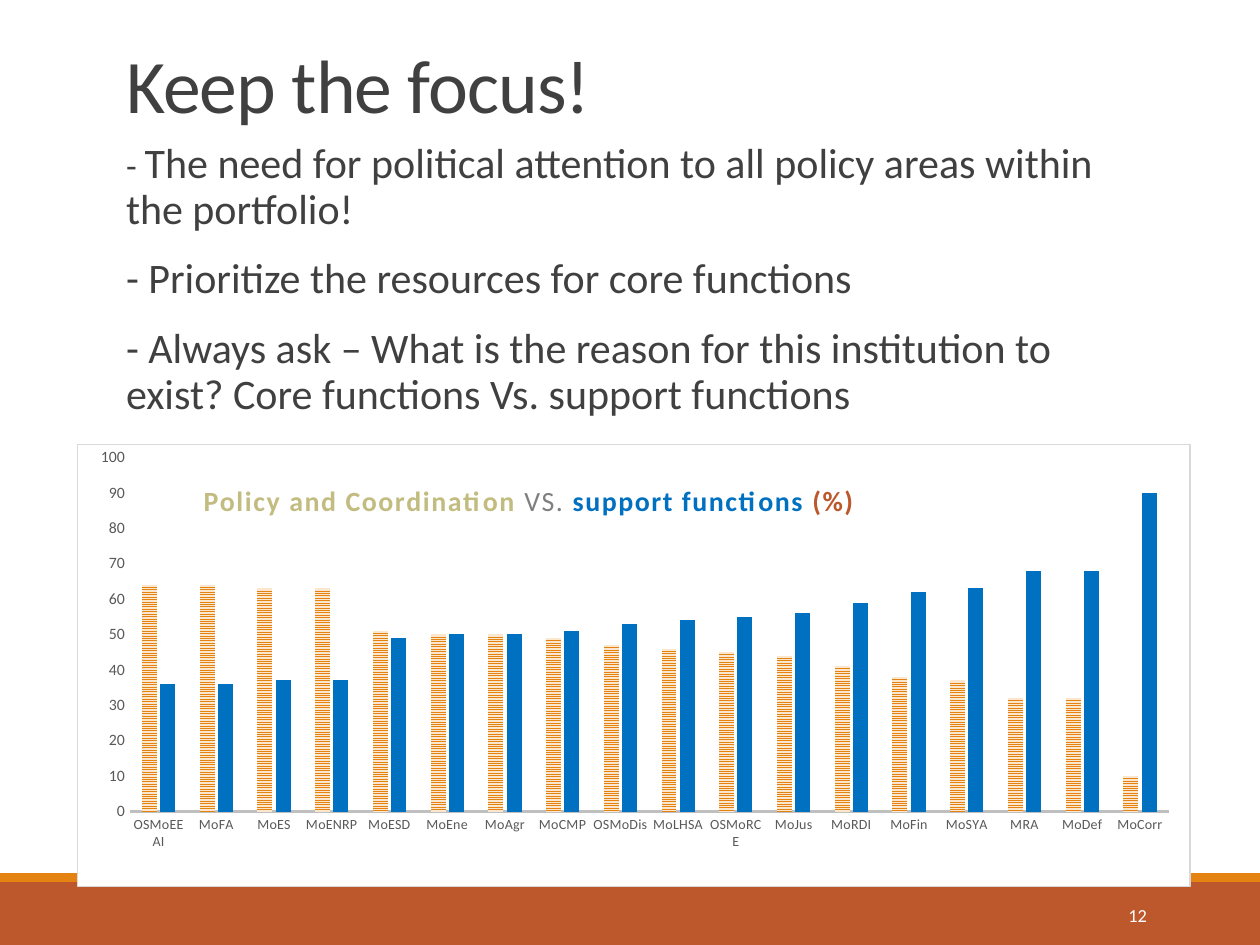
from lxml import etree
from pptx import Presentation
from pptx.chart.data import CategoryChartData
from pptx.dml.color import RGBColor
from pptx.enum.chart import XL_CHART_TYPE, XL_TICK_MARK
from pptx.enum.dml import MSO_PATTERN
from pptx.enum.shapes import MSO_SHAPE
from pptx.enum.text import MSO_ANCHOR, MSO_AUTO_SIZE, PP_ALIGN
from pptx.oxml.ns import qn
from pptx.util import Inches, Pt

COLUMN = XL_CHART_TYPE.COLUMN_CLUSTERED
RECT = MSO_SHAPE.RECTANGLE
STRIPE = MSO_PATTERN.NARROW_HORIZONTAL
NO_TICK = XL_TICK_MARK.NONE
LEFT, RIGHT = PP_ALIGN.LEFT, PP_ALIGN.RIGHT
TOP, MIDDLE, BOTTOM = MSO_ANCHOR.TOP, MSO_ANCHOR.MIDDLE, MSO_ANCHOR.BOTTOM
FIXED = MSO_AUTO_SIZE.NONE

WIDE, HIGH = 10, 7.5
FACE = "Calibri"
DARK, RUST, AMBER, BLUE = "404040", "BD582C", "E48312", "0070C0"

TITLE = "Keep the focus!"
POINTS = [
    [("- ", 20), ("The need for political attention to all policy areas within the portfolio!", 24)],
    [("- Prioritize the resources for core functions", 24)],
    [("- Always ask – What is the reason for this institution to exist? "
      "Core functions Vs. support functions", 24)],
]
NUMBER = "12"
HEADING = [
    ("Policy and Coordination ", "C2BC80", True),
    ("VS. ", "7F7F7F", False),
    ("support functions ", BLUE, True),
    ("(%)", RUST, True),
]
SHARES = [
    ("OSMoEEAI", 64, 36), ("MoFA", 64, 36), ("MoES", 63, 37),
    ("MoENRP", 63, 37), ("MoESD", 51, 49), ("MoEne", 50, 50),
    ("MoAgr", 50, 50), ("MoCMP", 49, 51), ("OSMoDis", 47, 53),
    ("MoLHSA", 46, 54), ("OSMoRCE", 45, 55), ("MoJus", 44, 56),
    ("MoRDI", 41, 59), ("MoFin", 38, 62), ("MoSYA", 37, 63),
    ("MRA", 32, 68), ("MoDef", 32, 68), ("MoCorr", 10, 90),
]
BANDS = [((0, 7, WIDE, 0.5), RUST), ((0, 6.93, WIDE, 0.07), AMBER)]
C_NS = "http://schemas.openxmlformats.org/drawingml/2006/chart"
A_NS = "http://schemas.openxmlformats.org/drawingml/2006/main"


def tint(code):
    return RGBColor.from_string(code)


def apply(item, **values):
    for name, value in values.items():
        setattr(item, name, value)


def place(shape, box):
    names = ("left", "top", "width", "height")
    apply(shape, **dict(zip(names, map(Inches, box))))


def style(font, size, code, bold=False):
    apply(font, name=FACE, size=Pt(size), bold=bold)
    font.color.rgb = tint(code)


def write(para, text, size, code, bold=False, space=0):
    run = para.add_run()
    run.text = text
    style(run.font, size, code, bold)
    if space:
        run._r.get_or_add_rPr().set("spc", str(space))


def layout(**parts):
    root = etree.Element(f"{{{C_NS}}}layout", nsmap={"c": C_NS})
    hold = etree.SubElement(root, f"{{{C_NS}}}manualLayout")
    for name, value in parts.items():
        etree.SubElement(hold, f"{{{C_NS}}}{name}", val=str(value))
    return root


def swap(parent, new, spot):
    old = parent.find(qn("c:layout"))
    if old is not None:
        parent.remove(old)
    parent.insert(spot, new)


def add_bands(slide):
    for box, code in BANDS:
        band = slide.shapes.add_shape(RECT, *map(Inches, box))
        band.shadow.inherit = False
        band.fill.solid()
        band.fill.fore_color.rgb = tint(code)
        band.line.fill.background()


def add_text(slide):
    title, body = slide.placeholders
    place(title, (0.9, 0.31, 8.25, 0.76))
    apply(title.text_frame, vertical_anchor=BOTTOM, auto_size=FIXED, word_wrap=True)
    para = title.text_frame.paragraphs[0]
    apply(para, alignment=LEFT, line_spacing=0.85)
    write(para, TITLE, 43.2, DARK, space=-50)

    place(body, (0.9, 1.08, 8.25, 5.34))
    frame = body.text_frame
    apply(frame, margin_left=0, margin_right=0, vertical_anchor=TOP,
          auto_size=FIXED, word_wrap=True)
    for i, runs in enumerate(POINTS):
        para = frame.add_paragraph() if i else frame.paragraphs[0]
        apply(para, line_spacing=0.9, space_before=Pt(12), space_after=Pt(2))
        props = para._p.get_or_add_pPr()
        props.set("marL", str(Inches(0.1)))
        props.set("indent", str(Inches(-0.1)))
        etree.SubElement(props, f"{{{A_NS}}}buChar", char=" ")
        for text, size in runs:
            write(para, text, size, DARK)

    page = slide.shapes.add_textbox(*map(Inches, (8.12, 7.06, 1.08, 0.4)))
    apply(page.text_frame, vertical_anchor=MIDDLE, word_wrap=True)
    para = page.text_frame.paragraphs[0]
    para.alignment = RIGHT
    write(para, NUMBER, 10.5, "FFFFFF")


def add_graph(slide):
    names, *values = zip(*SHARES)
    data = CategoryChartData()
    data.categories = names
    for i, row in enumerate(values, 1):
        data.add_series(f"Series {i}", row)
    box = map(Inches, (0.61, 3.52, 8.84, 3.52))
    chart = slide.shapes.add_chart(COLUMN, *box, data).chart
    root = chart._chartSpace
    style(chart.font, 10, "000000")
    chart.has_legend = False
    plot = chart.plots[0]
    apply(plot, gap_width=164, overlap=-22, vary_by_categories=False)

    first, second = (series.format.fill for series in plot.series)
    first.patterned()
    first.pattern = STRIPE
    first.fore_color.rgb = tint(AMBER)
    first.back_color.rgb = tint("FBE6CE")
    second.solid()
    second.fore_color.rgb = tint(BLUE)

    across, up = chart.category_axis, chart.value_axis
    for axis, size in ((across, 8), (up, 9)):
        apply(axis, major_tick_mark=NO_TICK, minor_tick_mark=NO_TICK,
              has_major_gridlines=False)
        style(axis.tick_labels.font, size, "595959")
    for kind in ("c:catAx", "c:valAx"):
        labels = root.find(f".//{qn(kind)}/{qn('c:txPr')}")
        labels.find(qn("a:bodyPr")).set("rot", "0")
    apply(up, minimum_scale=0, maximum_scale=100, major_unit=10)
    up.format.line.fill.background()
    across.format.line.color.rgb = tint("BFBFBF")
    across.format.line.width = Pt(1.5)

    para = chart.chart_title.text_frame.paragraphs[0]
    for text, code, bold in HEADING:
        write(para, text, 16, code, bold, 100)
    head = root.find(f"{qn('c:chart')}/{qn('c:title')}")
    swap(head, layout(xMode="edge", yMode="edge", x=0.11, y=0.08), 1)
    head.find(qn("c:overlay")).set("val", "1")
    area = root.find(".//" + qn("c:plotArea"))
    swap(area, layout(layoutTarget="inner", xMode="edge", yMode="edge",
                      x=0.047, y=0.03, w=0.934, h=0.801), 0)

    frame = etree.fromstring(
        f'<c:spPr xmlns:c="{C_NS}" xmlns:a="{A_NS}">'
        '<a:solidFill><a:srgbClr val="FFFFFF"/></a:solidFill>'
        f'<a:ln w="{Pt(0.75)}"><a:solidFill><a:srgbClr val="D9D9D9"/></a:solidFill></a:ln>'
        '</c:spPr>')
    root.find(qn("c:txPr")).addprevious(frame)


def main():
    """Build the slide on core and support functions."""
    deck = Presentation()
    apply(deck, slide_width=Inches(WIDE), slide_height=Inches(HIGH))
    slide = deck.slides.add_slide(deck.slide_layouts[1])
    add_bands(slide)
    add_text(slide)
    add_graph(slide)
    deck.save("out.pptx")


if __name__ == "__main__":
    main()
